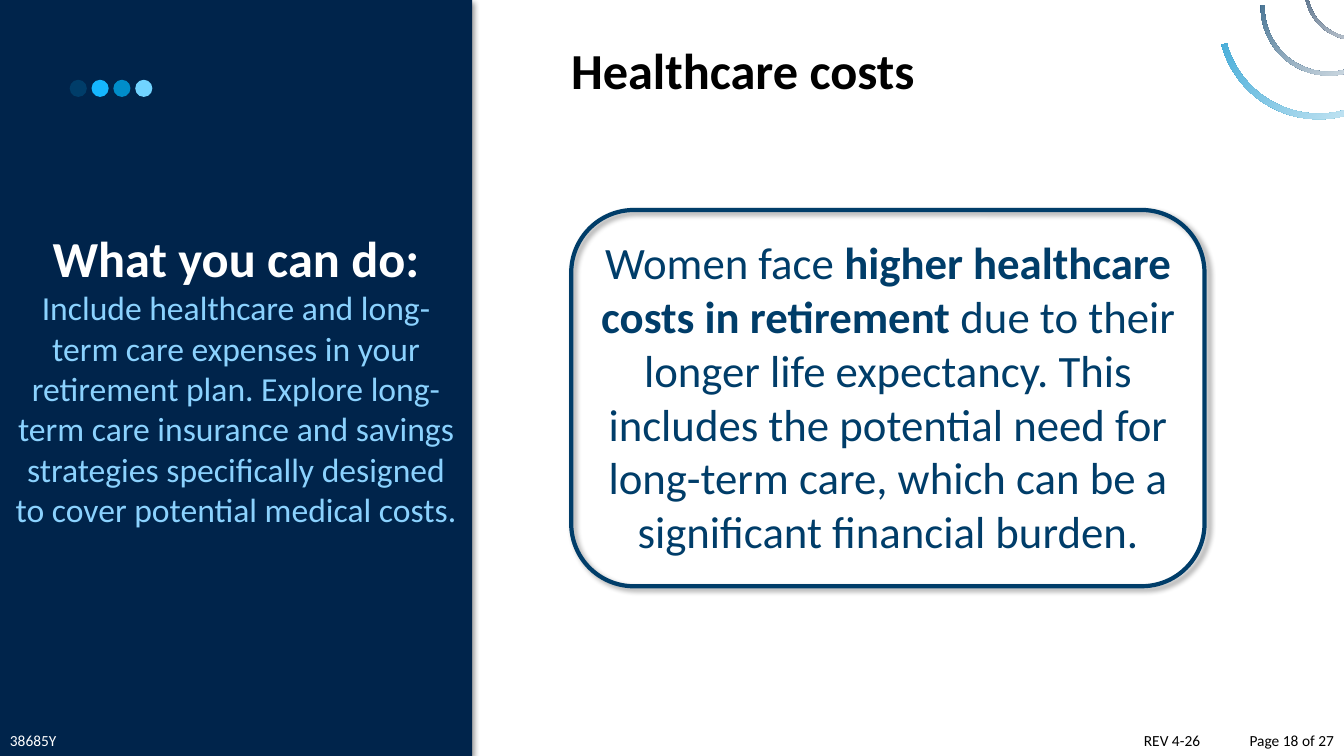
from typing import NamedTuple

from lxml import etree
from pptx import Presentation
from pptx import util as u
from pptx.dml.color import RGBColor
from pptx.enum import shapes, text
from pptx.oxml.ns import qn

NAVY = RGBColor(0x00, 0x24, 0x4B)
DEEP = RGBColor(0x00, 0x3D, 0x69)
BLUE = RGBColor(0x00, 0x8D, 0xCA)
BRIGHT = RGBColor(0x15, 0xB7, 0xFF)
SKY = RGBColor(0x71, 0xD3, 0xFF)
PALE = RGBColor(0x8B, 0xD2, 0xFE)
WHITE = RGBColor(0xFF, 0xFF, 0xFF)
BLACK = RGBColor(0x00, 0x00, 0x00)

FONT = "Calibri"
COLUMNS, ROWS = 160, 90
CELL = u.Inches(13.333) / COLUMNS

LEFT, CENTER, RIGHT = text.PP_ALIGN.LEFT, text.PP_ALIGN.CENTER, text.PP_ALIGN.RIGHT
KIND = shapes.MSO_SHAPE


class Box(NamedTuple):
    """Place on the grid, in columns and rows."""
    col: float
    row: float
    cols: float
    rows: float


class Run(NamedTuple):
    words: str
    size: float
    color: RGBColor
    bold: bool = False


class Label(NamedTuple):
    box: Box
    runs: list[Run]
    align: text.PP_ALIGN = LEFT


class Ring(NamedTuple):
    col: float
    row: float
    size: float
    turn: float
    color: RGBColor


FOOT_ROW, FOOT_ROWS = 86.5, 3.5
LABELS = [
    Label(Box(66.8, 4.1, 48.6, 8.5), [Run("Healthcare costs", 36, BLACK, True)]),
    Label(Box(68.8, 27.4, 73.9, 40), [
        Run("Women face ", 32, DEEP),
        Run("higher healthcare costs in retirement ", 32, DEEP, True),
        Run("due to their longer life expectancy. This includes the potential need "
            "for long-term care, which can be a significant financial burden.", 32, DEEP),
    ], CENTER),
    Label(Box(0, FOOT_ROW, 22.7, FOOT_ROWS), [Run("38685Y", 11, WHITE)]),
    Label(Box(135, FOOT_ROW, 12, FOOT_ROWS), [Run("REV 4-26", 11, BLACK)]),
    Label(Box(147.2, FOOT_ROW, 12.8, FOOT_ROWS), [Run("Page 18 of 27", 11, BLACK)], RIGHT),
]
PANEL = Box(0, 0, 56.2, ROWS)
ADVICE = [
    Run("What you can do:", 36, WHITE, True),
    Run("Include healthcare and long-term care expenses in your retirement plan. "
        "Explore long-term care insurance and savings strategies specifically designed "
        "to cover potential medical costs.", 24, PALE),
]
CALLOUT = Box(68, 25, 75.4, 44.8)
RINGS = [
    Ring(145, -9.8, 24, 351.9, BLUE),
    Ring(155.3, -7.4, 12.2, 13.5, NAVY),
    Ring(150.1, -7.2, 16.2, 9.2, DEEP),
]
RING_START, RING_END, RING_WIDTH = 212.7, 172.9, 0.028
DOT_COLORS = [DEEP, BRIGHT, BLUE, SKY]
DOT_COL, DOT_ROW, DOT_SIZE, DOT_PITCH = 8.3, 9.5, 2.04, 2.6


def emu(box: Box) -> list[int]:
    return [round(n * CELL) for n in box]


def add_shape(slide, kind: KIND, box: Box, fill: RGBColor | None = None):
    """Add a shape with no outline and no shadow."""
    sp = slide.shapes.add_shape(kind, *emu(box))
    sp.shadow.inherit = False
    sp.line.fill.background()
    if fill is None:
        sp.fill.background()
    else:
        sp.fill.solid()
        sp.fill.fore_color.rgb = fill
    return sp


def add_shadow(sp) -> None:
    effects = sp._element.spPr.find(qn("a:effectLst"))
    shadow = etree.SubElement(effects, qn("a:outerShdw"), blurRad=str(u.Pt(4)),
                              dist=str(u.Pt(3)), dir="2700000", algn="tl", rotWithShape="0")
    color = etree.SubElement(shadow, qn("a:srgbClr"), val=str(BLACK))
    etree.SubElement(color, qn("a:alpha"), val="40000")


def add_run(p, run: Run) -> None:
    r = p.add_run()
    r.text = run.words
    r.font.name = FONT
    r.font.size = u.Pt(run.size)
    r.font.bold = run.bold
    r.font.color.rgb = run.color


def add_label(slide, label: Label) -> None:
    tf = slide.shapes.add_textbox(*emu(label.box)).text_frame
    tf.word_wrap = True
    p = tf.paragraphs[0]
    p.alignment = label.align
    for run in label.runs:
        add_run(p, run)


def add_panel(slide) -> None:
    sp = add_shape(slide, KIND.RECTANGLE, PANEL, NAVY)
    add_shadow(sp)
    tf = sp.text_frame
    tf.word_wrap = True
    tf.vertical_anchor = text.MSO_ANCHOR.MIDDLE
    for i, run in enumerate(ADVICE):
        p = tf.add_paragraph() if i else tf.paragraphs[0]
        p.alignment = CENTER
        add_run(p, run)


def add_ring(slide, ring: Ring) -> None:
    """Add an open ring that fades to white."""
    sp = add_shape(slide, KIND.BLOCK_ARC, Box(ring.col, ring.row, ring.size, ring.size))
    sp.rotation = ring.turn
    # Angle adjustments count 60000ths of a degree, scaled down by 100000.
    sp.adjustments[0] = RING_START * 0.6
    sp.adjustments[1] = RING_END * 0.6
    sp.adjustments[2] = RING_WIDTH
    sp.fill.gradient()
    sp.fill.gradient_angle = 315
    for stop, color, position in zip(sp.fill.gradient_stops, (ring.color, WHITE), (0.01, 1)):
        stop.color.rgb = color
        stop.position = position


def add_callout(slide) -> None:
    sp = add_shape(slide, KIND.ROUNDED_RECTANGLE, CALLOUT)
    sp.line.color.rgb = DEEP
    sp.line.width = u.Pt(3)
    add_shadow(sp)


def main() -> None:
    prs = Presentation()
    prs.slide_width = round(COLUMNS * CELL)
    prs.slide_height = round(ROWS * CELL)
    slide = prs.slides.add_slide(prs.slide_layouts[6])

    add_panel(slide)
    for ring in RINGS:
        add_ring(slide, ring)
    add_callout(slide)
    for label in LABELS:
        add_label(slide, label)
    for i, color in enumerate(DOT_COLORS):
        add_shape(slide, KIND.OVAL,
                  Box(DOT_COL + i * DOT_PITCH, DOT_ROW, DOT_SIZE, DOT_SIZE), color)
    prs.save("out.pptx")


if __name__ == "__main__":
    main()
